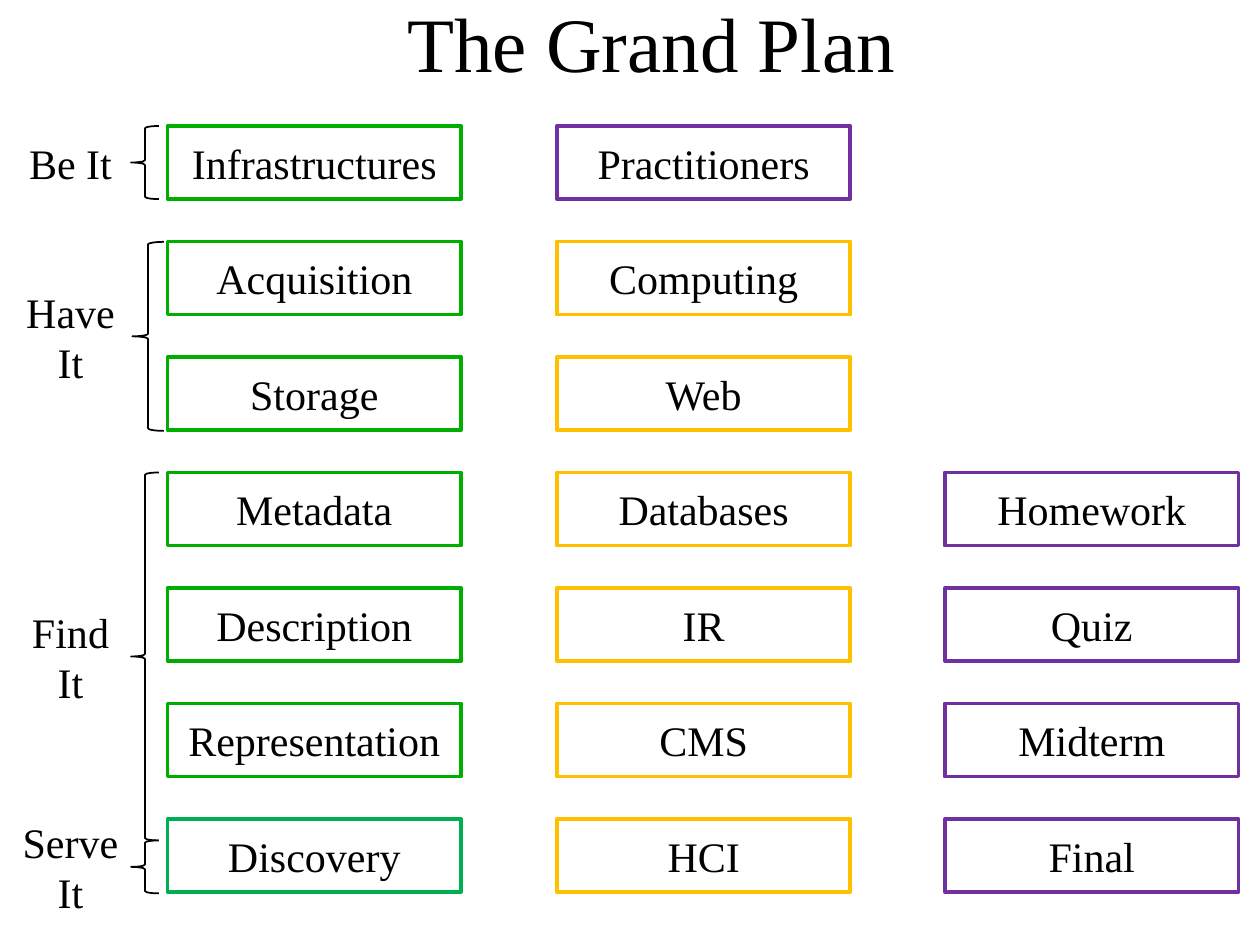
from pptx import Presentation
from pptx.dml.color import RGBColor
from pptx.enum.shapes import MSO_SHAPE as Preset
from pptx.enum.text import MSO_ANCHOR as Anchor, PP_ALIGN as Align
from pptx.util import Inches, Pt

GREEN, TEAL, PURPLE, GOLD = "00AE00", "00B050", "7030A0", "FFC000"
BLACK, WHITE = "000000", "FFFFFF"
FONT = "Times New Roman"

TOP = Inches(1)
ROW_PITCH = Inches(11 / 12)
BOX_WIDTH, BOX_HEIGHT = Inches(2.33), Inches(0.58)

COLUMNS = [
    (Inches(1.33), 0, [
        ("Infrastructures", GREEN), ("Acquisition", GREEN), ("Storage", GREEN),
        ("Metadata", GREEN), ("Description", GREEN), ("Representation", GREEN),
        ("Discovery", TEAL),
    ]),
    (Inches(4.42), 0, [
        ("Practitioners", PURPLE), ("Computing", GOLD), ("Web", GOLD),
        ("Databases", GOLD), ("IR", GOLD), ("CMS", GOLD), ("HCI", GOLD),
    ]),
    (Inches(7.5), 3, [
        ("Homework", PURPLE), ("Quiz", PURPLE), ("Midterm", PURPLE),
        ("Final", PURPLE),
    ]),
]

STAGES = [
    ("Be It", 1.04, 1, 0.22, 0.58),
    ("Have\nIt", 1.05, 1.92, 0.25, 1.5),
    ("Find\nIt", 1.04, 3.75, 0.22, 2.92),
    ("Serve\nIt", 1.04, 6.67, 0.22, 0.42),
]


def color(value):
    return RGBColor.from_string(value)


def write(shape, text, size=24, wrap=False):
    text_frame = shape.text_frame
    text_frame.text = text
    text_frame.word_wrap = wrap
    text_frame.vertical_anchor = Anchor.MIDDLE
    for paragraph in text_frame.paragraphs:
        paragraph.alignment = Align.CENTER
        for run in paragraph.runs:
            run.font.name = FONT
            run.font.size = Pt(size)
            run.font.color.rgb = color(BLACK)


def add_outlined(slide, preset, box, line, width):
    shape = slide.shapes.add_shape(preset, *box)
    shape.shadow.inherit = False
    shape.line.color.rgb = color(line)
    shape.line.width = Pt(width)
    return shape


def add_title(slide, box):
    write(slide.shapes.add_textbox(*box), "The Grand Plan", 44, True)


def add_topic_column(slide, left, top, topics):
    for row, (name, line) in enumerate(topics):
        box = (left, top + row * ROW_PITCH, BOX_WIDTH, BOX_HEIGHT)
        shape = add_outlined(slide, Preset.RECTANGLE, box, line, 2.25)
        shape.fill.background()
        write(shape, name)


def add_stage(slide, label, box):
    brace = add_outlined(slide, Preset.LEFT_BRACE, box, BLACK, 1)
    brace.fill.solid()
    brace.fill.fore_color.rgb = color(WHITE)
    left, top, width, height = box
    label_width = Inches(0.96)
    label_height = Inches(0.91 if "\n" in label else 0.5)
    label_top = top + (height - label_height) // 2
    text_box = slide.shapes.add_textbox(
        Inches(0.08), label_top, label_width, label_height)
    write(text_box, label)


def build_slide(presentation):
    slide = presentation.slides.add_slide(presentation.slide_layouts[6])
    add_title(slide, (Inches(0.92), 0, Inches(8.5), Inches(0.67)))
    for left, first_row, topics in COLUMNS:
        add_topic_column(slide, left, TOP + first_row * ROW_PITCH, topics)
    for label, *box in STAGES:
        add_stage(slide, label, [Inches(length) for length in box])


def main():
    presentation = Presentation()
    presentation.slide_width = Inches(10)
    presentation.slide_height = Inches(7.5)
    build_slide(presentation)
    presentation.save("out.pptx")


if __name__ == "__main__":
    main()
